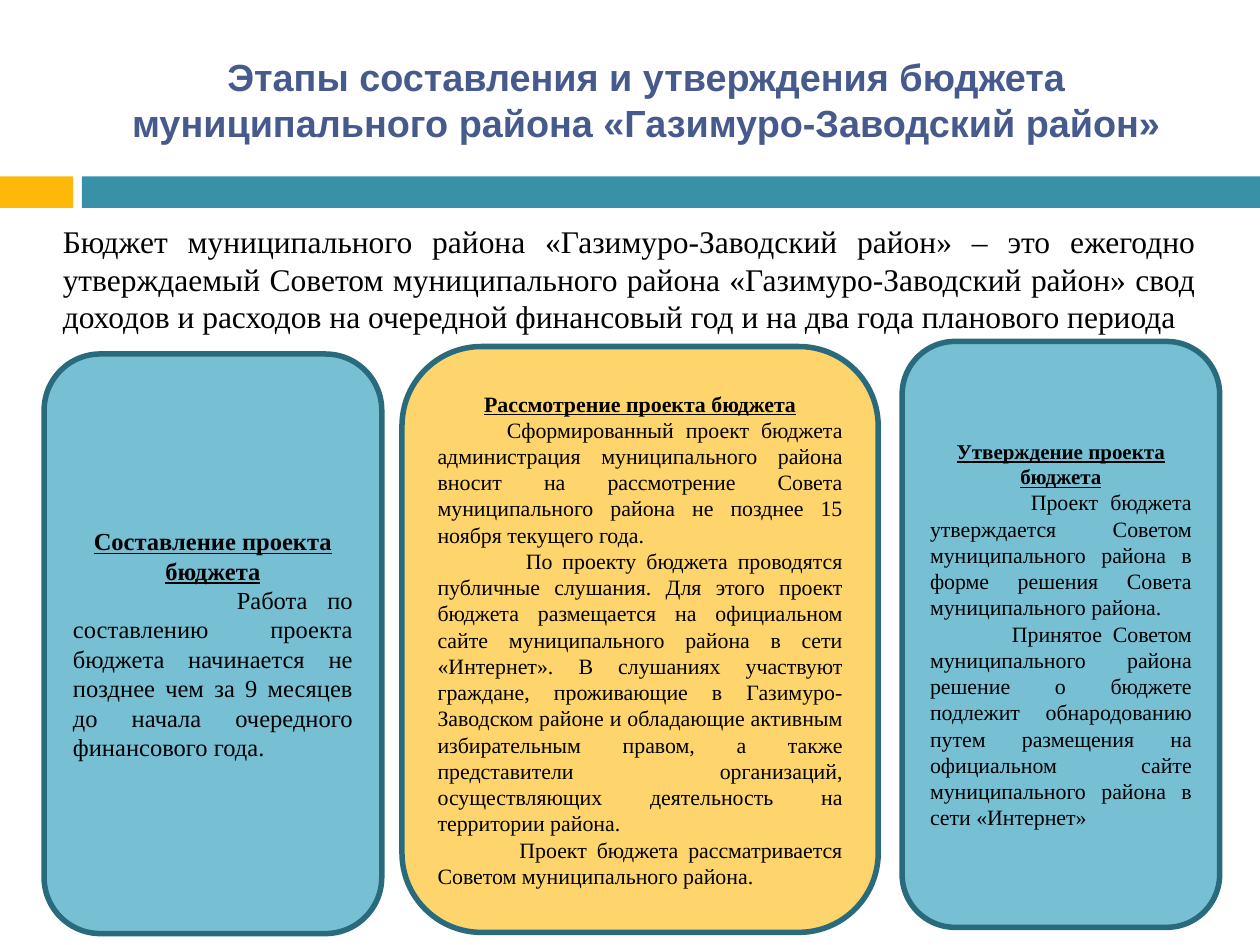
from pptx import Presentation
from pptx.dml.color import RGBColor
from pptx.enum.shapes import MSO_SHAPE
from pptx.enum.text import MSO_ANCHOR, MSO_AUTO_SIZE, PP_ALIGN
from pptx.util import Inches, Pt

RECT, ROUNDED = MSO_SHAPE.RECTANGLE, MSO_SHAPE.ROUNDED_RECTANGLE
MIDDLE = MSO_ANCHOR.MIDDLE
NO_FIT = MSO_AUTO_SIZE.NONE
CENTER, JUSTIFY = PP_ALIGN.CENTER, PP_ALIGN.JUSTIFY
TEAL, AMBER, BLUE, SAND, BORDER = "3891A7", "FEB80A", "77BFD3", "FED46C", "296B7C"


def add_box(kind, box, fill, line=None):
    sp = s.shapes.add_shape(kind, *[Inches(v) for v in box])
    sp.shadow.inherit = False
    sp.fill.solid()
    sp.fill.fore_color.rgb = RGBColor.from_string(fill)
    if line:
        sp.line.color.rgb = RGBColor.from_string(line)
        sp.line.width = Pt(3.15)
    else:
        sp.line.fill.background()
    sp.text_frame.word_wrap = True
    sp.text_frame.vertical_anchor = MIDDLE
    return sp


def format_text(p, text, size, align, font="Times New Roman", color="000000",
                bold=False, underline=False, indent=0):
    p.text = text
    p.alignment = align
    p.font.name = font
    p.font.size = Pt(size)
    p.font.bold = bold
    p.font.underline = underline
    p.font.color.rgb = RGBColor.from_string(color)
    if indent:
        pPr = p._p.get_or_add_pPr()
        pPr.set("marL", "0")
        pPr.set("indent", str(Inches(indent)))


prs = Presentation()
prs.slide_width, prs.slide_height = Inches(10), Inches(7.5)
s = prs.slides.add_slide(prs.slide_layouts[5])

# Title
title = s.shapes.title
title.left, title.top = Inches(0.67), Inches(0.25)
title.width, title.height = Inches(8.92), Inches(1.08)
tf = title.text_frame
tf.word_wrap = True
tf.auto_size = NO_FIT
tf.vertical_anchor = MIDDLE
format_text(tf.paragraphs[0],
            "Этапы составления и утверждения бюджета муниципального района "
            "«Газимуро-Заводский район»",
            21.6, CENTER, font="Arial", color="475A8D", bold=True)

# Band under the title
add_box(RECT, (0, 1.4, 0.58, 0.25), AMBER)
add_box(RECT, (0.65, 1.4, 9.35, 0.25), TEAL)

# Definition of the budget
definition = add_box(ROUNDED, (0.35, 1.7, 9.29, 1.02), "FFFFFF", "FFFFFF")
format_text(definition.text_frame.paragraphs[0],
            "Бюджет муниципального района «Газимуро-Заводский район» – это ежегодно "
            "утверждаемый Советом муниципального района «Газимуро-Заводский район» свод "
            "доходов и расходов на очередной финансовый год и на два года планового периода",
            18, JUSTIFY)

# Stages: box, fill, heading, heading size, body size, [(first-line indent, text)]
stages = [
    ((0.35, 2.81, 2.68, 4.6), BLUE, "Составление проекта бюджета", 14, 14, [
        (1.3, "Работа по составлению проекта бюджета начинается не позднее чем за "
              "9 месяцев до начала очередного финансового года."),
    ]),
    ((3.19, 2.75, 3.78, 4.65), SAND, "Рассмотрение проекта бюджета", 12.5, 12.5, [
        (0.55, "Сформированный проект бюджета администрация муниципального района "
               "вносит на рассмотрение Совета муниципального района не позднее "
               "15 ноября текущего года."),
        (0.7, "По проекту бюджета проводятся публичные слушания. Для этого проект "
              "бюджета размещается на официальном сайте муниципального района в сети "
              "«Интернет». В слушаниях участвуют граждане, проживающие в "
              "Газимуро-Заводском районе и обладающие активным избирательным правом, "
              "а также представители организаций, осуществляющих деятельность на "
              "территории района."),
        (0.65, "Проект бюджета рассматривается Советом муниципального района."),
    ]),
    ((7.16, 2.71, 2.52, 4.65), BLUE, "Утверждение проекта бюджета", 12, 12.5, [
        (0.8, "Проект бюджета утверждается Советом муниципального района в форме "
              "решения Совета муниципального района."),
        (0.65, "Принятое Советом муниципального района решение о бюджете подлежит "
               "обнародованию путем размещения на официальном сайте муниципального "
               "района в сети «Интернет»"),
    ]),
]
for box, fill, heading, heading_size, body_size, body in stages:
    tf = add_box(ROUNDED, box, fill, BORDER).text_frame
    format_text(tf.paragraphs[0], heading, heading_size, CENTER, bold=True, underline=True)
    for indent, text in body:
        format_text(tf.add_paragraph(), text, body_size, JUSTIFY, indent=indent)

prs.save("out.pptx")
